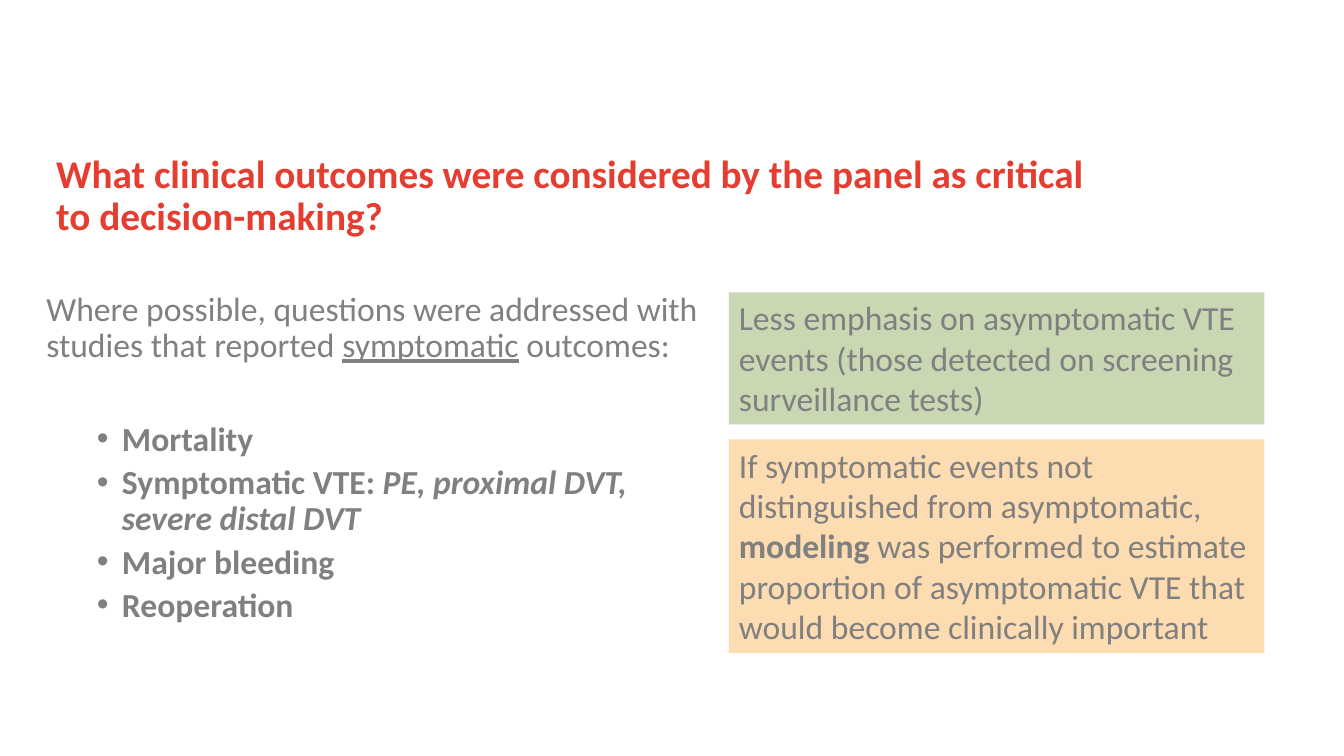
from lxml import etree
from pptx import Presentation
from pptx.dml.color import RGBColor
from pptx.enum.shapes import MSO_SHAPE
from pptx.enum.text import MSO_ANCHOR, PP_ALIGN
from pptx.oxml.ns import qn
from pptx.util import Inches, Pt

RECTANGLE = MSO_SHAPE.RECTANGLE
TOP, MIDDLE = MSO_ANCHOR.TOP, MSO_ANCHOR.MIDDLE
LEFT = PP_ALIGN.LEFT

FONT = "Calibri"
RED, GRAY = "E53E31", "808080"
GREEN, ORANGE = "C9D7B2", "FCDCB0"

OUTCOMES = [
    [("Mortality", "b")],
    [("Symptomatic VTE: ", "b"), ("PE, proximal DVT, \nsevere distal DVT", "bi")],
    [("Major bleeding", "b")],
    [("Reoperation", "b")],
]


def color(hex_value):
    return RGBColor.from_string(hex_value)


def add_text(paragraph, text, size=24, fill=GRAY, style=""):
    """Append text; style holds any of b, i and u, and a newline is a line break."""
    for index, line in enumerate(text.split("\n")):
        if index:
            paragraph.add_line_break()
        run = paragraph.add_run()
        run.text = line
        font = run.font
        font.name, font.size = FONT, Pt(size)
        font.color.rgb = color(fill)
        font.bold, font.italic, font.underline = (key in style for key in "biu")


def prepare_frame(shape, anchor=TOP):
    frame = shape.text_frame
    frame.word_wrap = True
    frame.vertical_anchor = anchor
    return frame


def add_bullet(paragraph):
    properties = paragraph._p.get_or_add_pPr()
    properties.set("marL", str(Inches(0.75)))
    properties.set("indent", str(Inches(-0.25)))
    etree.SubElement(properties, qn("a:buFont")).set("typeface", "Arial")
    etree.SubElement(properties, qn("a:buChar")).set("char", "•")


def add_title(slide, text):
    box = slide.shapes.add_textbox(Inches(0.46), Inches(1.48), Inches(12), Inches(0.78))
    paragraph = prepare_frame(box).paragraphs[0]
    paragraph.line_spacing = 0.9
    add_text(paragraph, text, size=28, fill=RED, style="b")


def add_outcomes(slide, intro, outcomes):
    box = slide.shapes.add_textbox(Inches(0.46), Inches(2.9), Inches(6.85), Inches(4.32))
    frame = prepare_frame(box)
    frame.margin_left = frame.margin_right = frame.margin_top = frame.margin_bottom = 0
    lead = frame.paragraphs[0]
    lead.line_spacing = 0.9
    for text, style in intro:
        add_text(lead, text, style=style)
    for index, outcome in enumerate(outcomes):
        paragraph = frame.add_paragraph()
        add_bullet(paragraph)
        paragraph.line_spacing = 0.9
        paragraph.space_before = Pt(5 if index else 41)
        for text, style in outcome:
            add_text(paragraph, text, style=style)


def add_panel(slide, top, height, fill, parts):
    panel = slide.shapes.add_shape(
        RECTANGLE, Inches(7.23), Inches(top), Inches(5.31), Inches(height))
    panel.shadow.inherit = False
    panel.fill.solid()
    panel.fill.fore_color.rgb = color(fill)
    panel.line.fill.background()
    paragraph = prepare_frame(panel, TOP).paragraphs[0]
    paragraph.alignment = LEFT
    for text, style in parts:
        add_text(paragraph, text, style=style)


def main():
    deck = Presentation()
    deck.slide_width, deck.slide_height = Inches(13.33), Inches(7.5)
    slide = deck.slides.add_slide(deck.slide_layouts[6])
    add_title(slide, "What clinical outcomes were considered by the panel as critical \n"
                     "to decision-making?")
    add_outcomes(slide, [
        ("Where possible, questions were addressed with studies that reported ", ""),
        ("symptomatic", "u"),
        (" outcomes:", ""),
    ], OUTCOMES)
    add_panel(slide, 4.36, 2.12, ORANGE, [
        ("If symptomatic events not distinguished from asymptomatic, ", ""),
        ("modeling", "b"),
        (" was performed to estimate proportion of asymptomatic VTE that "
         "would become clinically important", ""),
    ])
    add_panel(slide, 2.9, 1.31, GREEN, [
        ("Less emphasis on asymptomatic VTE events "
         "(those detected on screening surveillance tests)", ""),
    ])
    deck.save("out.pptx")


if __name__ == "__main__":
    main()
